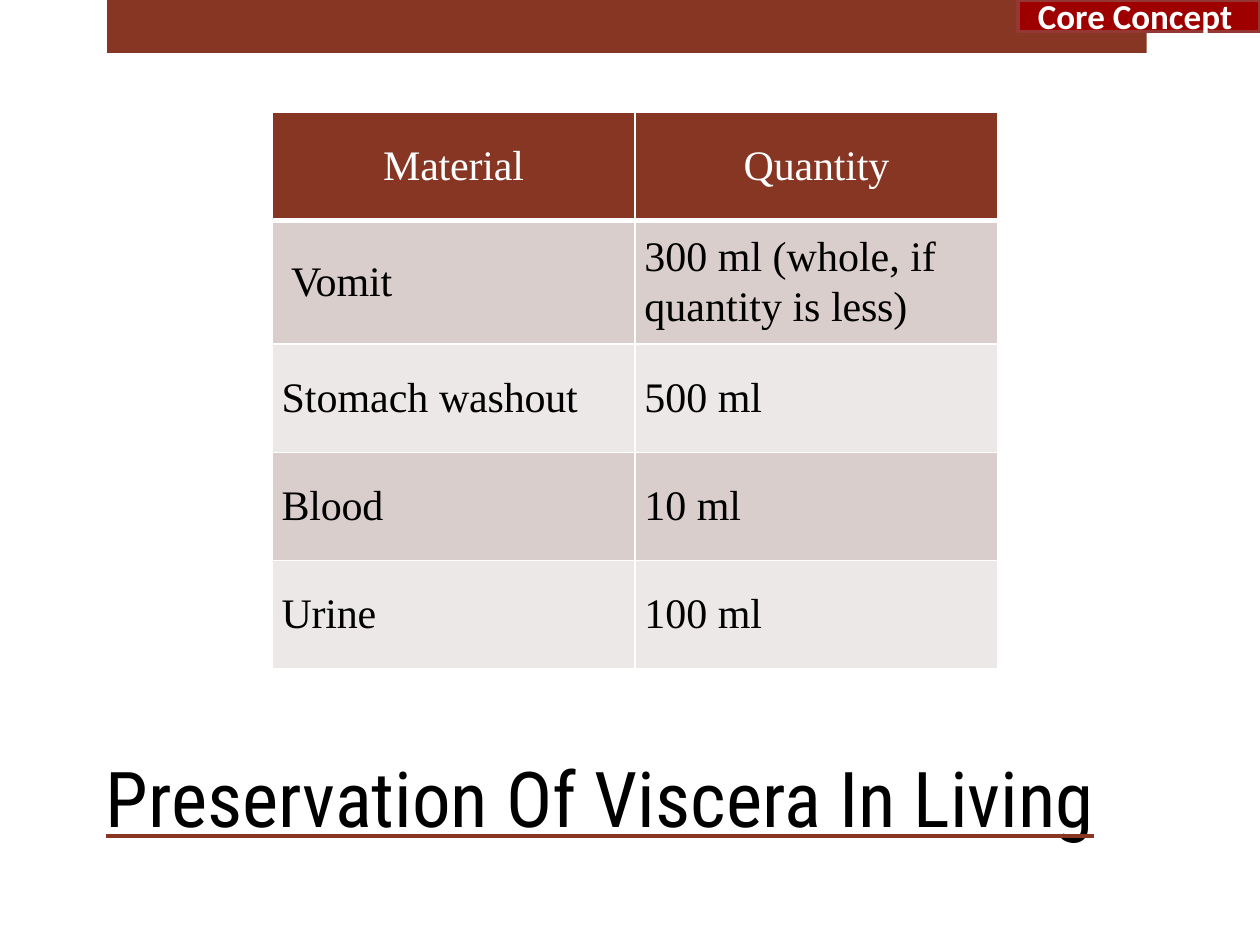
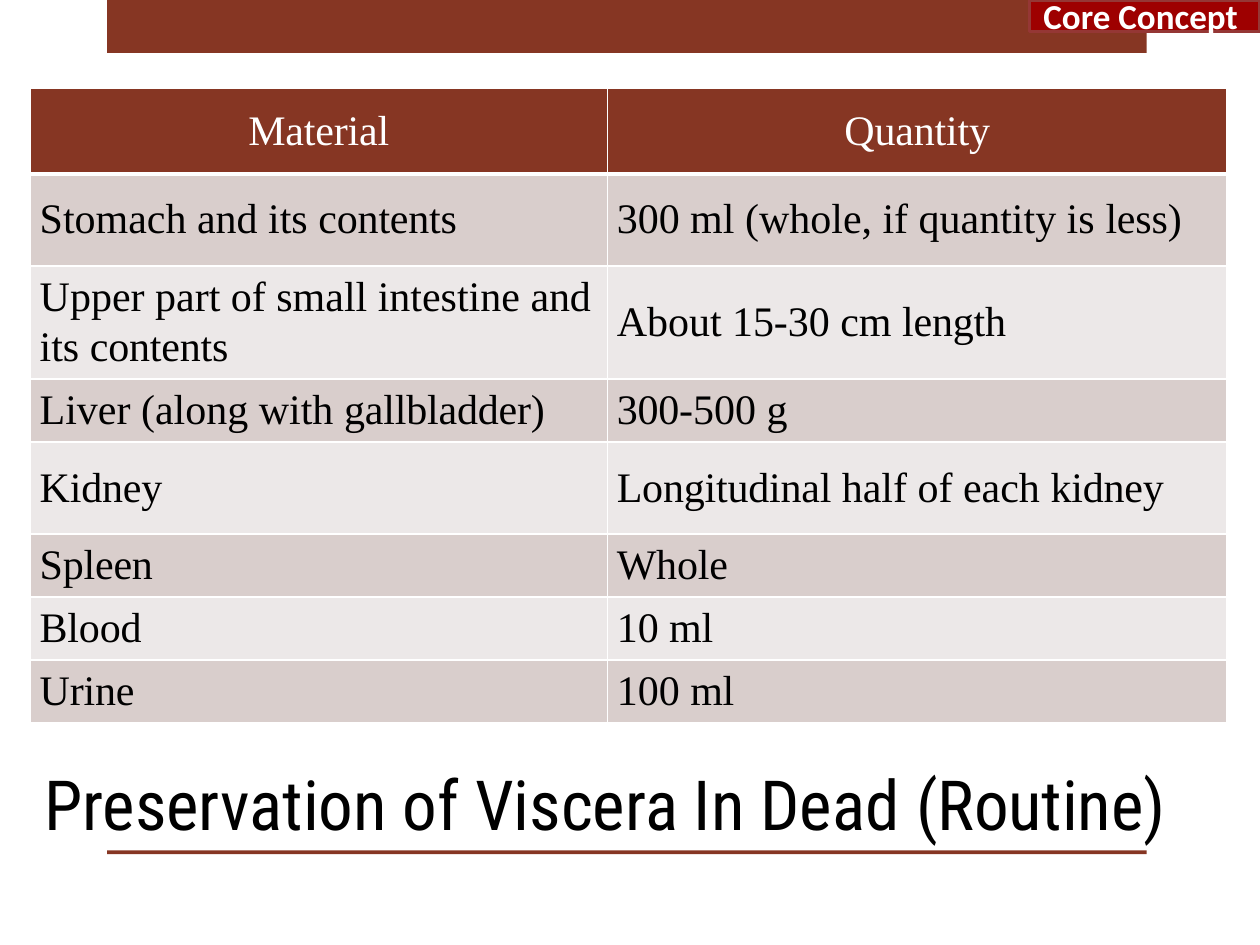
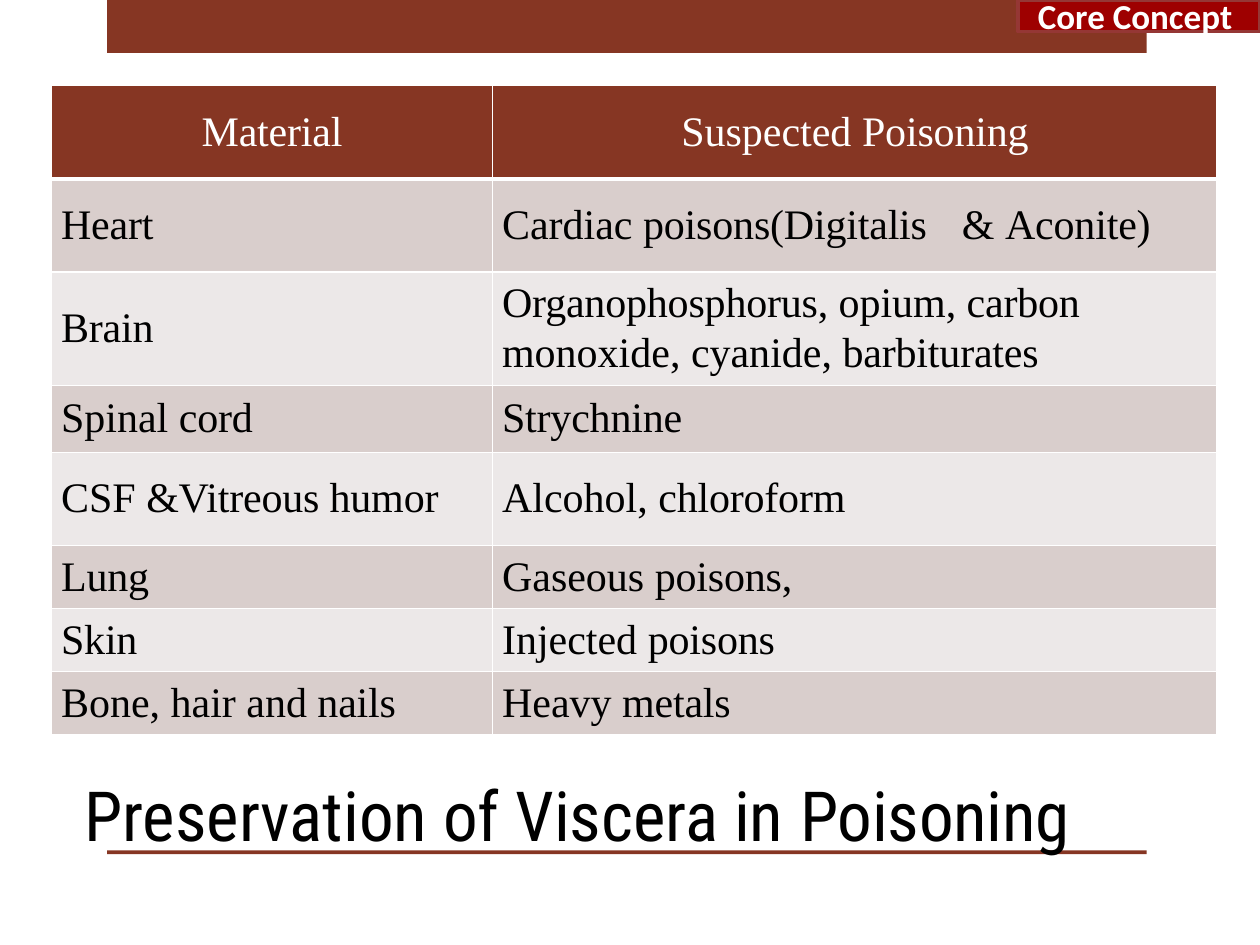
from lxml.etree import SubElement
from pptx import Presentation
from pptx.dml.color import RGBColor
from pptx.enum.shapes import MSO_SHAPE as Shape
from pptx.enum.text import MSO_ANCHOR as Anchor, PP_ALIGN as Align
from pptx.oxml.ns import qn
from pptx.util import Inches, Pt

COLORS = {
    "brand": "863623", "badge": "9E0000", "badge_line": "953735",
    "band_dark": "D9CECC", "band_light": "ECE8E8",
    "white": "FFFFFF", "black": "000000",
}
FONTS = {"title": "Roboto Condensed", "table": "Times New Roman", "badge": "Calibri"}
COLUMNS, ROWS = 100, 75


def rgb(name):
    return RGBColor.from_string(COLORS[name])


def add_solid(parent, color):
    fill = SubElement(parent, qn("a:solidFill"))
    SubElement(fill, qn("a:srgbClr"), val=COLORS[color])


class SlideMaker:
    def __init__(self, deck):
        self.deck = deck
        self.page = None

    def x(self, columns):
        return round(self.deck.slide_width * columns / COLUMNS)

    def y(self, rows):
        return round(self.deck.slide_height * rows / ROWS)

    def area(self, left, top, width, height):
        return self.x(left), self.y(top), self.x(width), self.y(height)

    def new_page(self):
        self.page = self.deck.slides.add_slide(self.deck.slide_layouts[6])
        self.bar(0, 4.2)

    def add_spans(self, para, text, font, size, color, tight=0.1, bold=False, underline=None):
        for index, part in enumerate(text.split("|")):
            if not part:
                continue
            span = para.add_run()
            span.text = part
            span.font.name, span.font.size = FONTS[font], Pt(size)
            span.font.bold = bold
            span.font.color.rgb = rgb(color)
            props = span.font._element
            if index % 2:
                props.set("spc", str(round(-100 * tight)))
            if underline:
                span.font.underline = True
                line_fill = SubElement(props, qn("a:uFill"))
                add_solid(line_fill, underline)
                props.find(qn("a:solidFill")).addnext(line_fill)

    def block(self, left, top, width, height, fill):
        shape = self.page.shapes.add_shape(Shape.RECTANGLE, *self.area(left, top, width, height))
        shape.shadow.inherit = False
        shape.fill.solid()
        shape.fill.fore_color.rgb = rgb(fill)
        shape.line.fill.background()
        return shape

    def bar(self, top, height):
        self.block(8.5, top, 82.5, height, "brand")

    def badge(self, width):
        shape = self.block(COLUMNS - width, 0, width, 2.5, "badge")
        shape.line.color.rgb = rgb("badge_line")
        shape.line.width = Pt(2)
        shape.text_frame.vertical_anchor = Anchor.MIDDLE
        para = shape.text_frame.paragraphs[0]
        para.alignment = Align.CENTER
        self.add_spans(para, "Core Concept ", "badge", 20, "white", bold=True)

    def title(self, area, text, size=39.5, **style):
        box = self.page.shapes.add_textbox(*self.area(*area))
        frame = box.text_frame
        frame.word_wrap = True
        frame.margin_left, frame.margin_top = self.x(0.1), self.y(0.2)
        frame.margin_right = frame.margin_bottom = 0
        self.add_spans(frame.paragraphs[0], text, "title", size, "black", **style)

    def cell_borders(self, cell, top, bottom):
        props = cell._tc.get_or_add_tcPr()
        for tag, points in (("lnL", 1), ("lnR", 1), ("lnT", top), ("lnB", bottom)):
            add_solid(SubElement(props, qn(f"a:{tag}"), w=str(Pt(points))), "white")

    def cell(self, cell, text, row, indent, tab=None):
        header = row == 0
        self.cell_borders(cell, 3 if row == 1 else 1, 3 if header else 1)
        cell.fill.solid()
        cell.fill.fore_color.rgb = rgb("brand" if header else "band_dark" if row % 2 else "band_light")
        cell.vertical_anchor = Anchor.MIDDLE
        cell.margin_left = 0 if header else self.x(indent)
        cell.margin_top = cell.margin_right = 0
        cell.margin_bottom = self.y(0.3)
        frame = cell.text_frame
        for number, line in enumerate(text.split("\n")):
            para = frame.add_paragraph() if number else frame.paragraphs[0]
            para.line_spacing = Pt(28.5)
            para.alignment = Align.CENTER if header else Align.LEFT
            if "\t" in line:
                stops = SubElement(para._p.get_or_add_pPr(), qn("a:tabLst"))
                SubElement(stops, qn("a:tab"), pos=str(self.x(tab)), algn="l")
            self.add_spans(para, line, "table", 24, "white" if header else "black")

    def table(self, left, top, widths, rows, tab=None):
        heights = [row[0] for row in rows]
        area = self.area(left, top, sum(widths), sum(heights))
        table = self.page.shapes.add_table(len(rows), len(widths), *area).table
        table.first_row = table.horz_banding = False
        for column, width in zip(table.columns, widths):
            column.width = self.x(width)
        for index, (height, material, detail, *indent) in enumerate(rows):
            table.rows[index].height = self.y(height)
            self.cell(table.cell(index, 0), material, index, indent[0] if indent else 0.75)
            self.cell(table.cell(index, 1), detail, index, 0.75, tab)


LIVING = [
    (8.6, "|Material", "|Quantity"),
    (9.8, "|Vomit", "300 ml (whole, |if |quantity is |less)", 1.5),
    (8.6, "Stomach |washout", "500 |ml"),
    (8.6, "|Blood", "10 |ml"),
    (8.6, "|Urine", "100 |ml"),
]
DEAD = [
    (6.8, "|Material", "|Quantity"),
    (7.3, "Stomach and its |contents", "300 ml (whole, if quantity is |less)"),
    (9, "Upper part of small intestine |and\nits |contents", "About |15-|30 cm |length"),
    (5, "Liver (along with |gallbladder)", "|300-|500 |g"),
    (7.3, "|Kidney", "|Longitudinal |half of each |kidney"),
    (5, "|Spleen", "|Whole"),
    (5, "|Blood", "10 |ml"),
    (5, "|Urine", "100 |ml"),
]
POISONING = [
    (7.4, "|Material", "Suspected |Poisoning"),
    (7.4, "|Heart", "Cardiac |poisons(Digitalis|\t& |Aconite)"),
    (9, "|Brain", "|Organophosphorus, |opium,| carbon\nmonoxide, cyanide, |barbiturates"),
    (5.3, "Spinal |cord", "|Strychnine"),
    (7.4, "CSF |&Vitreous humor", "Alcohol, |chloroform"),
    (5, "|Lung", "Gaseous |poisons,"),
    (5, "|Skin", "Injected |poisons"),
    (5, "Bone, hair and| nails", "Heavy |metals"),
]


def main():
    deck = Presentation()
    deck.slide_width, deck.slide_height = Inches(10), Inches(7.5)
    maker = SlideMaker(deck)

    maker.new_page()
    maker.table(21.6, 8.9, (28.8, 28.8), LIVING)
    maker.title((8.3, 59.4, 82.9, 7.8), "Preservation| |Of Viscera| |In| |Living",
                size=44, tight=0.7, underline="brand")
    maker.badge(19.2)

    maker.new_page()
    maker.bar(67.5, 0.3)
    maker.table(2.4, 7, (45.8, 49.2), DEAD)
    maker.title((3.4, 60.2, 93.8, 7), "Preservation of Viscera In Dead |(Routine)")
    maker.badge(18.3)

    maker.new_page()
    maker.bar(67.5, 0.3)
    maker.table(4.1, 6.8, (35, 57.5), POISONING, tab=36.5)
    maker.title((6.6, 61.1, 82.7, 7), "Preservation of Viscera in |Poisoning")
    maker.badge(19.2)

    deck.save("out.pptx")


if __name__ == "__main__":
    main()
